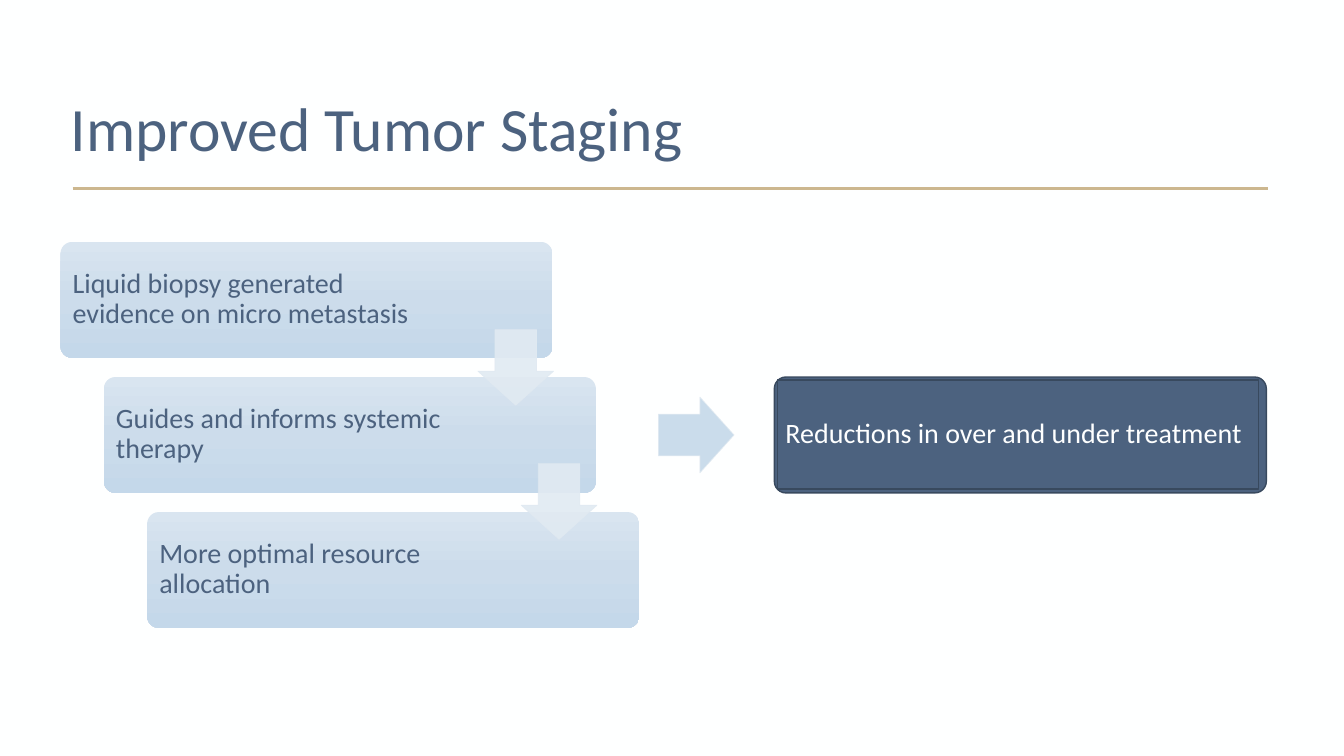
from copy import deepcopy

from lxml import etree
from pptx import Presentation
from pptx.dml.color import RGBColor
from pptx.enum.shapes import MSO_CONNECTOR, MSO_SHAPE
from pptx.enum.text import MSO_ANCHOR, MSO_AUTO_SIZE, PP_ALIGN
from pptx.oxml.ns import qn
from pptx.util import Inches, Pt

ROUNDED, BOX = MSO_SHAPE.ROUNDED_RECTANGLE, MSO_SHAPE.RECTANGLE
DOWN_ARROW = MSO_SHAPE.DOWN_ARROW
NAVY, DARK_NAVY, WHITE = "4C627F", "38495E", "FEFFFF"
GOLD, PALE_BLUE, ARROW_BLUE = "CCB78F", "E1EAF2", "CADCEB"
STEP_GRADIENT = ["D9E5F0", "CCDCEB", "C4D8EA"]
STEP_WIDTH, STEP_HEIGHT, ARROW_SIZE = 4.88, 1.15, 0.75


def rgb(value):
    return RGBColor.from_string(value)


def write(shape, text, size, color, inset, anchor):
    """Fill a shape with one left-aligned paragraph."""
    frame = shape.text_frame
    frame.text = text
    frame.word_wrap = True
    frame.auto_size = MSO_AUTO_SIZE.NONE
    frame.vertical_anchor = anchor
    frame.margin_left = frame.margin_right = Inches(inset)
    frame.margin_top = frame.margin_bottom = Inches(min(inset, 0.08))
    para = frame.paragraphs[0]
    para.alignment = PP_ALIGN.LEFT
    para.line_spacing = 0.9
    font = para.runs[0].font
    font.name, font.size = "Calibri", Pt(size)
    font.color.rgb = rgb(color)


deck = Presentation()
deck.slide_width, deck.slide_height = Inches(13.33), Inches(7.5)
page = deck.slides.add_slide(deck.slide_layouts[5])
page.background.fill.solid()
page.background.fill.fore_color.rgb = rgb(WHITE)

# Title and rule
title = page.shapes.title
title.left, title.top = Inches(0.6), Inches(0.09)
title.width, title.height = Inches(11.41), Inches(1.62)
write(title, "Improved Tumor Staging", 44, NAVY, 0.1, MSO_ANCHOR.BOTTOM)

rule = page.shapes.add_connector(
    MSO_CONNECTOR.STRAIGHT, Inches(0.72), Inches(1.87), Inches(12.58), Inches(1.87))
rule.line.color.rgb = rgb(GOLD)
rule.line.width = Pt(1.5)
etree.SubElement(rule._element.spPr, qn("a:effectLst"))

# Staircase of steps
steps = [
    "Liquid biopsy generated evidence on micro metastasis",
    "Guides and informs systemic therapy",
    "More optimal resource allocation",
]
for index, text in enumerate(steps):
    left, top = 0.6 + 0.43 * index, 2.4 + 1.34 * index
    step = page.shapes.add_shape(
        ROUNDED, Inches(left), Inches(top), Inches(STEP_WIDTH), Inches(STEP_HEIGHT))
    step.adjustments[0] = 0.1
    step.shadow.inherit = False
    step.line.fill.background()
    step.fill.gradient()
    step.fill.gradient_angle = 270
    stop_list = step._element.spPr.find(".//" + qn("a:gsLst"))
    stop_list.insert(1, deepcopy(stop_list[0]))
    for position, (stop, color) in enumerate(zip(step.fill.gradient_stops, STEP_GRADIENT)):
        stop.position = position / 2
        stop.color.rgb = rgb(color)
    label = page.shapes.add_textbox(
        Inches(left + 0.04), Inches(top + 0.03), Inches(3.64), Inches(1.08))
    write(label, text, 20, NAVY, 0.08, MSO_ANCHOR.MIDDLE)

# Arrows between the steps, then towards the outcome
arrows = [
    (4.74, 3.27, 0, PALE_BLUE),
    (5.17, 4.6, 0, PALE_BLUE),
    (6.53, 3.94, 270, ARROW_BLUE),
]
for left, top, rotation, color in arrows:
    arrow = page.shapes.add_shape(
        DOWN_ARROW, Inches(left), Inches(top), Inches(ARROW_SIZE), Inches(ARROW_SIZE))
    arrow.adjustments[0], arrow.adjustments[1] = 0.55, 0.45
    arrow.rotation = rotation
    arrow.shadow.inherit = False
    arrow.fill.solid()
    arrow.fill.fore_color.rgb = rgb(color)
    arrow.line.color.rgb = rgb(PALE_BLUE)
    arrow.line.width = Pt(0.5)
    for tint in arrow._element.spPr.iter(qn("a:srgbClr")):
        if tint.get("val") == PALE_BLUE:
            etree.SubElement(tint, qn("a:alpha"), val="90000")

# Outcome: a rounded frame with an inner panel
outcome_parts = [
    (ROUNDED, 7.68, 3.74, STEP_WIDTH, STEP_HEIGHT),
    (BOX, 7.71, 3.77, 4.77, 1.08),
]
for kind, left, top, width, height in outcome_parts:
    outcome = page.shapes.add_shape(
        kind, Inches(left), Inches(top), Inches(width), Inches(height))
    outcome.shadow.inherit = False
    outcome.fill.solid()
    outcome.fill.fore_color.rgb = rgb(NAVY)
    outcome.line.color.rgb = rgb(DARK_NAVY)
    outcome.line.width = Pt(1)
    if kind == ROUNDED:
        outcome.adjustments[0] = 0.1
    else:
        write(outcome, "Reductions in over and under treatment", 20, WHITE, 0.08,
              MSO_ANCHOR.MIDDLE)

deck.save("out.pptx")
